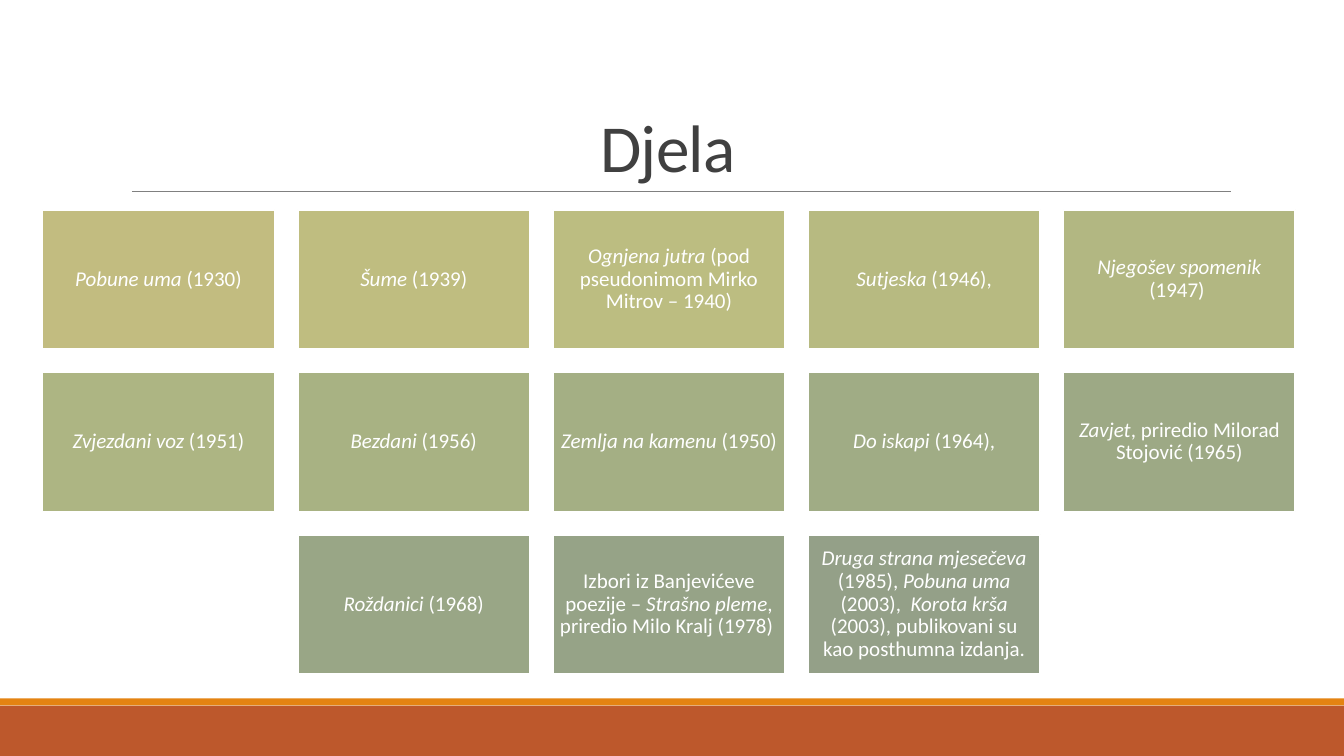
from pptx import Presentation
from pptx import util as u
from pptx.dml.color import RGBColor
from pptx.enum import shapes, text
from pptx.oxml.ns import qn
from lxml import etree

FONT = "Calibri"
COLUMNS = 5
CARD_W, CARD_H = 165.7, 99.4
GAP = 16.6
GRID_LEFT, GRID_TOP = 30.4, 149.9

# Fill and text of each card; asterisks enclose italics
WORKS = [
    ("C2BC80", "*Pobune uma *(1930)"),
    ("BFBD80", "*Šume *(1939)"),
    ("BCBD81", "*Ognjena jutra *(pod pseudonimom Mirko Mitrov – 1940)"),
    ("B7BA81", "*Sutjeska *(1946),"),
    ("B2B782", "*Njegošev spomenik *(1947) "),
    ("ADB583", "*Zvjezdani voz *(1951)"),
    ("A8B283", "*Bezdani *(1956)"),
    ("A4AF84", "*Zemlja na kamenu *(1950)"),
    ("A0AC85", "*Do iskapi *(1964),"),
    ("9DA985", "*Zavjet*, priredio Milorad Stojović (1965)"),
    ("99A686", "*Roždanici *(1968)"),
    ("96A387", "Izbori iz Banjevićeve poezije – *Strašno pleme*, "
               "priredio Milo Kralj (1978) "),
    ("94A088", "*Druga strana mjesečeva *(1985), *Pobuna uma *(2003),  "
               "*Korota krša *(2003), publikovani su kao posthumna izdanja."),
]


def color(value):
    return RGBColor.from_string(value)


def style_span(span, size, value, italic=False):
    span.font.name = FONT
    span.font.size = u.Pt(size)
    span.font.italic = italic
    span.font.color.rgb = color(value)


def add_box(page, left, top, width, height, fill, border=None):
    box = page.shapes.add_shape(shapes.MSO_SHAPE.RECTANGLE, u.Pt(left),
                                u.Pt(top), u.Pt(width), u.Pt(height))
    box.shadow.inherit = False
    box.fill.solid()
    box.fill.fore_color.rgb = color(fill)
    if border:
        box.line.color.rgb = color(border)
        box.line.width = u.Pt(1.25)
    else:
        box.line.fill.background()
    return box


def add_rule(page, left, right, top):
    rule = page.shapes.add_connector(shapes.MSO_CONNECTOR.STRAIGHT, u.Pt(left),
                                     u.Pt(top), u.Pt(right), u.Pt(top))
    rule.line.color.rgb = color("808080")
    rule.line.width = u.Pt(0.5)
    etree.SubElement(rule.element.spPr, qn("a:effectLst"))


def set_title(page, wording):
    title = page.shapes.title
    title.left, title.top = u.Pt(86.4), u.Pt(22.6)
    title.width, title.height = u.Pt(792), u.Pt(114.2)
    frame = title.text_frame
    frame.text = wording
    frame.auto_size = text.MSO_AUTO_SIZE.NONE
    frame.vertical_anchor = text.MSO_ANCHOR.BOTTOM
    para = frame.paragraphs[0]
    para.alignment = text.PP_ALIGN.CENTER
    para.line_spacing = 0.85
    span = para.runs[0]
    style_span(span, 48, "404040")
    span.font._element.set("spc", "-50")


def add_card(page, left, top, fill, wording):
    box = add_box(page, left, top, CARD_W, CARD_H, fill, "FFFFFF")
    frame = box.text_frame
    frame.word_wrap = True
    frame.vertical_anchor = text.MSO_ANCHOR.MIDDLE
    frame.margin_left = frame.margin_right = u.Pt(4.5)
    frame.margin_top = frame.margin_bottom = u.Pt(4.5)
    para = frame.paragraphs[0]
    para.alignment = text.PP_ALIGN.CENTER
    para.line_spacing = 0.9
    for index, piece in enumerate(wording.split("*")):
        if piece:
            span = para.add_run()
            span.text = piece
            style_span(span, 15, "FFFFFF", italic=index % 2 == 1)


def add_cards(page):
    for start in range(0, len(WORKS), COLUMNS):
        row = WORKS[start:start + COLUMNS]
        # A short row is centred
        indent = (COLUMNS - len(row)) / 2
        top = GRID_TOP + start // COLUMNS * (CARD_H + GAP)
        for column, (fill, wording) in enumerate(row):
            left = GRID_LEFT + (column + indent) * (CARD_W + GAP)
            add_card(page, left, top, fill, wording)


def main():
    deck = Presentation()
    deck.slide_width, deck.slide_height = u.Pt(960), u.Pt(540)
    page = deck.slides.add_slide(deck.slide_layouts[5])

    # Footer bands and title rule
    add_box(page, 0, 504, 960, 36, "BD582C")
    add_box(page, 0, 498.8, 960, 5.04, "E48312")
    add_rule(page, 94.3, 879, 136.6)

    # Title and works
    set_title(page, "Djela ")
    add_cards(page)
    deck.save("out.pptx")


if __name__ == "__main__":
    main()
